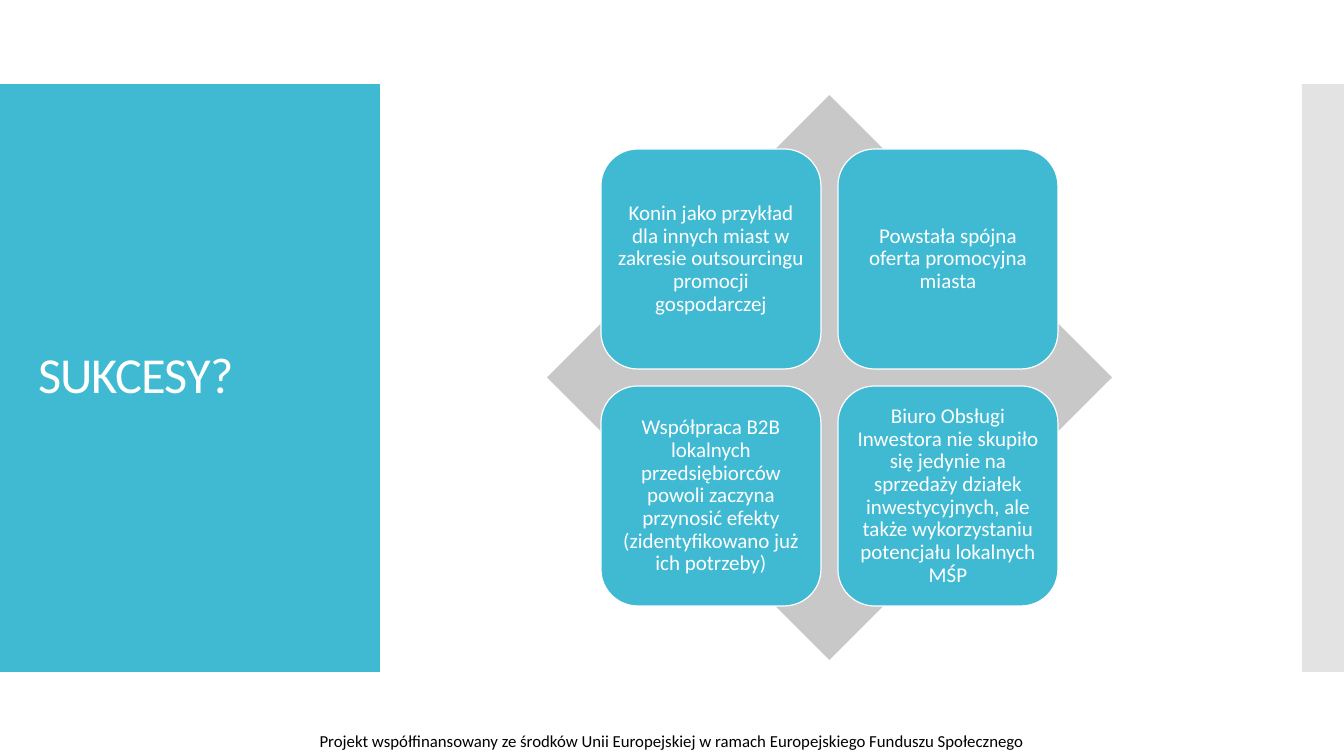
from dataclasses import dataclass

from lxml.etree import SubElement
from pptx import Presentation
from pptx.dml.color import RGBColor
from pptx.enum.shapes import MSO_SHAPE
from pptx.enum.text import MSO_ANCHOR, MSO_AUTO_SIZE, PP_ALIGN
from pptx.oxml.ns import qn
from pptx.util import Emu, Pt

PX_PER_INCH = 100.8


@dataclass(frozen=True)
class Theme:
    accent: RGBColor = RGBColor(0x40, 0xBA, 0xD2)
    grey: RGBColor = RGBColor(0xC8, 0xC8, 0xC8)
    white: RGBColor = RGBColor(0xFF, 0xFF, 0xFF)
    black: RGBColor = RGBColor(0, 0, 0)
    font: str = "Calibri"
    title_size: int = 36
    card_size: int = 15
    footer_size: int = 12


THEME = Theme()

SUCCESSES = [
    "Konin jako przykład dla innych miast w zakresie outsourcingu promocji gospodarczej",
    "Powstała spójna oferta promocyjna miasta",
    "Współpraca B2B lokalnych przedsiębiorców powoli zaczyna przynosić efekty "
    "(zidentyfikowano już ich potrzeby)",
    "Biuro Obsługi Inwestora nie skupiło się jedynie na sprzedaży działek inwestycyjnych, "
    "ale także wykorzystaniu potencjału lokalnych MŚP",
]


def px(length):
    return Emu(round(length * 914400 / PX_PER_INCH))


def emu_box(box):
    return [px(length) for length in box]


def add_filled(slide, preset, box, color):
    shape = slide.shapes.add_shape(preset, *emu_box(box))
    shape.shadow.inherit = False
    shape.fill.solid()
    shape.fill.fore_color.rgb = color
    shape.line.fill.background()
    return shape


def write(frame, text, size, color, align, line_spacing=1.0):
    frame.word_wrap = True
    frame.text = text
    paragraph = frame.paragraphs[0]
    paragraph.alignment = align
    paragraph.line_spacing = line_spacing
    paragraph.font.name = THEME.font
    paragraph.font.size = Pt(size)
    paragraph.font.color.rgb = color
    return paragraph


def add_title_panel(slide, box, text):
    left, top, width, height = box
    add_filled(slide, MSO_SHAPE.RECTANGLE, box, THEME.accent)
    title = slide.shapes.title
    slide.shapes._spTree.append(title._element)
    title.left, title.top, title.width, title.height = emu_box(
        (left + 28, top + 40, width - 55, height - 81))
    frame = title.text_frame
    frame.auto_size = MSO_AUTO_SIZE.NONE
    frame.vertical_anchor = MSO_ANCHOR.MIDDLE
    heading = write(frame, text, THEME.title_size, THEME.white, PP_ALIGN.LEFT, 0.9)
    heading.runs[0]._r.get_or_add_rPr().set("spc", "-60")


def add_edge_strip(slide, box):
    strip = add_filled(slide, MSO_SHAPE.RECTANGLE, box, THEME.grey)
    color = strip._element.spPr.find(qn("a:solidFill"))[0]
    SubElement(color, qn("a:alpha")).set("val", "50000")


def add_success_matrix(slide, box, successes):
    left, top, side, _ = box
    inset, card, gap = 54, 220, 17
    add_filled(slide, MSO_SHAPE.DIAMOND, box, THEME.grey)
    for index, success in enumerate(successes):
        row, column = divmod(index, 2)
        card_box = (left + inset + column * (card + gap),
                    top + inset + row * (card + gap), card, card)
        tile = add_filled(slide, MSO_SHAPE.ROUNDED_RECTANGLE, card_box, THEME.accent)
        tile.line.color.rgb = THEME.white
        tile.line.width = Pt(0.85)
        frame = tile.text_frame
        frame.margin_left = frame.margin_right = px(6)
        frame.margin_top = frame.margin_bottom = px(6)
        frame.vertical_anchor = MSO_ANCHOR.MIDDLE
        write(frame, success, THEME.card_size, THEME.white, PP_ALIGN.CENTER, 0.9)


def add_funding_note(slide, box, text):
    note = slide.shapes.add_textbox(*emu_box(box))
    write(note.text_frame, text, THEME.footer_size, THEME.black, PP_ALIGN.CENTER)


def main():
    deck = Presentation()
    deck.slide_width, deck.slide_height = px(1344), px(756)
    slide = deck.slides.add_slide(deck.slide_layouts[5])
    add_title_panel(slide, (0, 84, 380, 588), "SUKCESY?")
    add_edge_strip(slide, (1302, 84, 42, 588))
    add_success_matrix(slide, (547, 95, 565, 565), SUCCESSES)
    add_funding_note(
        slide, (223, 726, 898, 30),
        "Projekt współfinansowany ze środków Unii Europejskiej "
        "w ramach Europejskiego Funduszu Społecznego")
    deck.save("out.pptx")


if __name__ == "__main__":
    main()
